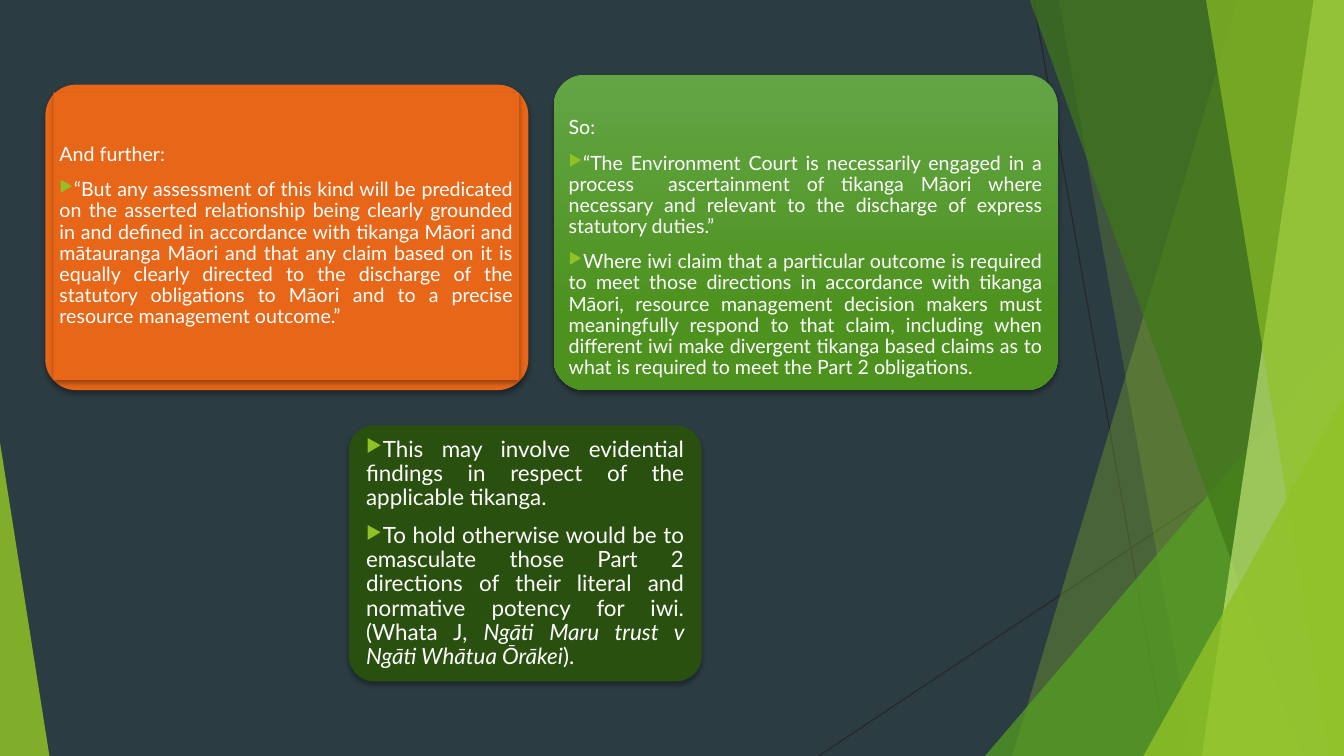
"""Build a slide of three quotation cards on a faceted dark background."""
import pptx
import pptx.dml.color
import pptx.enum.shapes
import pptx.enum.text
import pptx.oxml
import pptx.oxml.ns
import pptx.util
from lxml import etree

Inches, Pt = pptx.util.Inches, pptx.util.Pt
RGBColor = pptx.dml.color.RGBColor
SHAPE = pptx.enum.shapes.MSO_SHAPE
ALIGN = pptx.enum.text.PP_ALIGN
ANCHOR = pptx.enum.text.MSO_ANCHOR
qn = pptx.oxml.ns.qn

WIDTH, HEIGHT = 13.33, 7.5
FACET_TOP = -0.01
FONT = "Lato"
SLATE = RGBColor(0x2C, 0x3C, 0x43)
CHARCOAL = RGBColor(0x26, 0x26, 0x26)
LIME = RGBColor(0x90, 0xC2, 0x26)
LEAF = RGBColor(0x54, 0xA0, 0x21)
FOREST = RGBColor(0x3F, 0x78, 0x19)
PALE = RGBColor(0xC0, 0xE4, 0x74)
ORANGE = RGBColor(0xE7, 0x66, 0x18)
GREEN_TOP = RGBColor(0x63, 0xA5, 0x45)
GREEN_BOTTOM = RGBColor(0x4D, 0x92, 0x1E)
DARK_GREEN = RGBColor(0x2A, 0x50, 0x10)
WHITE = RGBColor(0xFF, 0xFF, 0xFF)

RAYS = [(10.25, 0, 11.58, 7.5), (13.33, 4.03, 8.12, 7.5)]

# Bands give the top and bottom x of the left edge; peaks give a box and apex.
FACETS = [
    ("band", (12.28, 10.04), LIME, 30),
    ("band", (10.5, 11.83), LIME, 20),
    ("peak", (9.77, 3.33, 3.56, 4.17, 1), LEAF, 72),
    ("band", (10.21, 12.91), FOREST, 70),
    ("band", (13.03, 11.92), PALE, 70),
    ("band", (11.96, 13.18), LIME, 65),
    ("peak", (11.34, 3.93, 1.99, 3.57, 1), LIME, 80),
    ("peak", (0, 4.39, 0.49, 3.11, 0), LIME, 85),
]

FURTHER_INTRO = "And further:"
FURTHER = [
    "“But any assessment of this kind will be predicated on the asserted relationship "
    "being clearly grounded in and defined in accordance with tikanga Māori and "
    "mātauranga Māori and that any claim based on it is equally clearly directed to the "
    "discharge of the statutory obligations to Māori and to a precise resource "
    "management outcome.”",
]
SO_INTRO = "So:"
SO = [
    "“The Environment Court is necessarily engaged in a process  ascertainment of tikanga "
    "Māori where necessary and relevant to the discharge of express statutory duties.”",
    "Where iwi claim that a particular outcome is required to meet those directions in "
    "accordance with tikanga Māori, resource management decision makers must meaningfully "
    "respond to that claim, including when different iwi make divergent tikanga based "
    "claims as to what is required to meet the Part 2 obligations.",
]
FINDINGS = [
    "This may involve evidential findings in respect of the applicable tikanga.",
    "To hold otherwise would be to emasculate those Part 2 directions of their literal and "
    "normative potency for iwi. (Whata J, *Ngāti Maru trust v Ngāti Whātua Ōrākei*).",
]


def add_ray(slide, x1, y1, x2, y2):
    line = slide.shapes.add_connector(
        pptx.enum.shapes.MSO_CONNECTOR.STRAIGHT,
        Inches(x1), Inches(y1), Inches(x2), Inches(y2))
    line.line.color.rgb = CHARCOAL
    line.line.width = Pt(0.75)
    etree.SubElement(line._element.spPr, qn("a:effectLst"))


def add_facet(slide, kind, geometry, color, opacity):
    if kind == "band":
        top_x, bottom_x = geometry
        fb = slide.shapes.build_freeform(
            Inches(top_x), Inches(FACET_TOP))
        corners = [(WIDTH, FACET_TOP), (WIDTH, HEIGHT), (bottom_x, HEIGHT)]
        fb.add_line_segments([(Inches(x), Inches(y)) for x, y in corners], close=True)
        sp = fb.convert_to_shape()
    else:
        *box, apex = geometry
        sp = slide.shapes.add_shape(SHAPE.ISOSCELES_TRIANGLE, *map(Inches, box))
        sp.adjustments[0] = apex
    sp.shadow.inherit = False
    sp.line.fill.background()
    sp.fill.solid()
    sp.fill.fore_color.rgb = color
    clr = sp._element.spPr.find(".//" + qn("a:srgbClr"))
    etree.SubElement(clr, qn("a:alpha"), val=str(opacity * 1000))


def add_card(slide, box, color, preset=SHAPE.ROUNDED_RECTANGLE):
    sp = slide.shapes.add_shape(preset, *map(Inches, box))
    if preset == SHAPE.ROUNDED_RECTANGLE:
        sp.adjustments[0] = 0.1
    sp.line.fill.background()
    sp.fill.solid()
    sp.fill.fore_color.rgb = color
    sp.shadow.inherit = False
    effects = sp._element.spPr.find(qn("a:effectLst"))
    shadow = etree.SubElement(
        effects, qn("a:outerShdw"), blurRad=str(Pt(3.5)), dist=str(Pt(2.2)),
        dir="5400000", algn="ctr", rotWithShape="0")
    clr = etree.SubElement(shadow, qn("a:srgbClr"), val="000000")
    etree.SubElement(clr, qn("a:alpha"), val="32000")
    return sp


def set_frame(sp, anchor, inset=None):
    tf = sp.text_frame
    tf.word_wrap = True
    tf.vertical_anchor = anchor
    if inset is not None:
        tf.margin_left = tf.margin_right = Inches(inset)
        tf.margin_top = tf.margin_bottom = Inches(inset)
    return tf


def write(tf, text, size=14, align=ALIGN.JUSTIFY, bullet=True):
    p = tf.paragraphs[0] if not tf.paragraphs[0].runs else tf.add_paragraph()
    p.alignment = align
    p.line_spacing = 0.9
    p.space_before = Pt(10)
    if bullet:
        pPr = p._p.get_or_add_pPr()
        pPr.set("marL", "0")
        pPr.set("indent", "0")
        clr = etree.SubElement(pPr, qn("a:buClr"))
        etree.SubElement(clr, qn("a:srgbClr"), val=str(LIME))
        etree.SubElement(pPr, qn("a:buSzPct"), val="80000")
        etree.SubElement(pPr, qn("a:buChar"), char="▶")
    for i, part in enumerate(text.split("*")):
        r = p.add_run()
        r.text = part
        r.font.name = FONT
        r.font.size = Pt(size)
        r.font.italic = i % 2 == 1
        r.font.color.rgb = WHITE


def main():
    prs = pptx.Presentation()
    prs.slide_width, prs.slide_height = Inches(WIDTH), Inches(HEIGHT)
    slide = prs.slides.add_slide(prs.slide_layouts[6])
    slide.background.fill.solid()
    slide.background.fill.fore_color.rgb = SLATE
    for ray in RAYS:
        add_ray(slide, *ray)
    for facet in FACETS:
        add_facet(slide, *facet)

    add_card(slide, (0.45, 0.84, 4.79, 3.03), ORANGE)
    further = add_card(slide, (0.53, 0.92, 4.62, 2.85), ORANGE, SHAPE.RECTANGLE)
    tf = set_frame(further, ANCHOR.MIDDLE, 0.06)
    write(tf, FURTHER_INTRO, bullet=False)
    for text in FURTHER:
        write(tf, text)

    so = add_card(slide, (5.49, 0.74, 5, 3.13), GREEN_TOP)
    so.fill.gradient()
    so.fill.gradient_angle = 270
    stops = [(0, GREEN_TOP), (0.78, GREEN_BOTTOM)]
    for stop, (position, color) in zip(so.fill.gradient_stops, stops):
        stop.position = position
        stop.color.rgb = color
    so_text = slide.shapes.add_textbox(*map(Inches, (5.58, 0.88, 4.82, 2.94)))
    tf = set_frame(so_text, ANCHOR.BOTTOM, 0.06)
    write(tf, SO_INTRO, align=ALIGN.LEFT, bullet=False)
    for text in SO:
        write(tf, text)

    findings = add_card(slide, (3.46, 4.22, 3.5, 2.54), DARK_GREEN)
    tf = set_frame(findings, ANCHOR.TOP)
    for text in FINDINGS:
        write(tf, text, size=16)
    prs.save("out.pptx")


if __name__ == "__main__":
    main()
